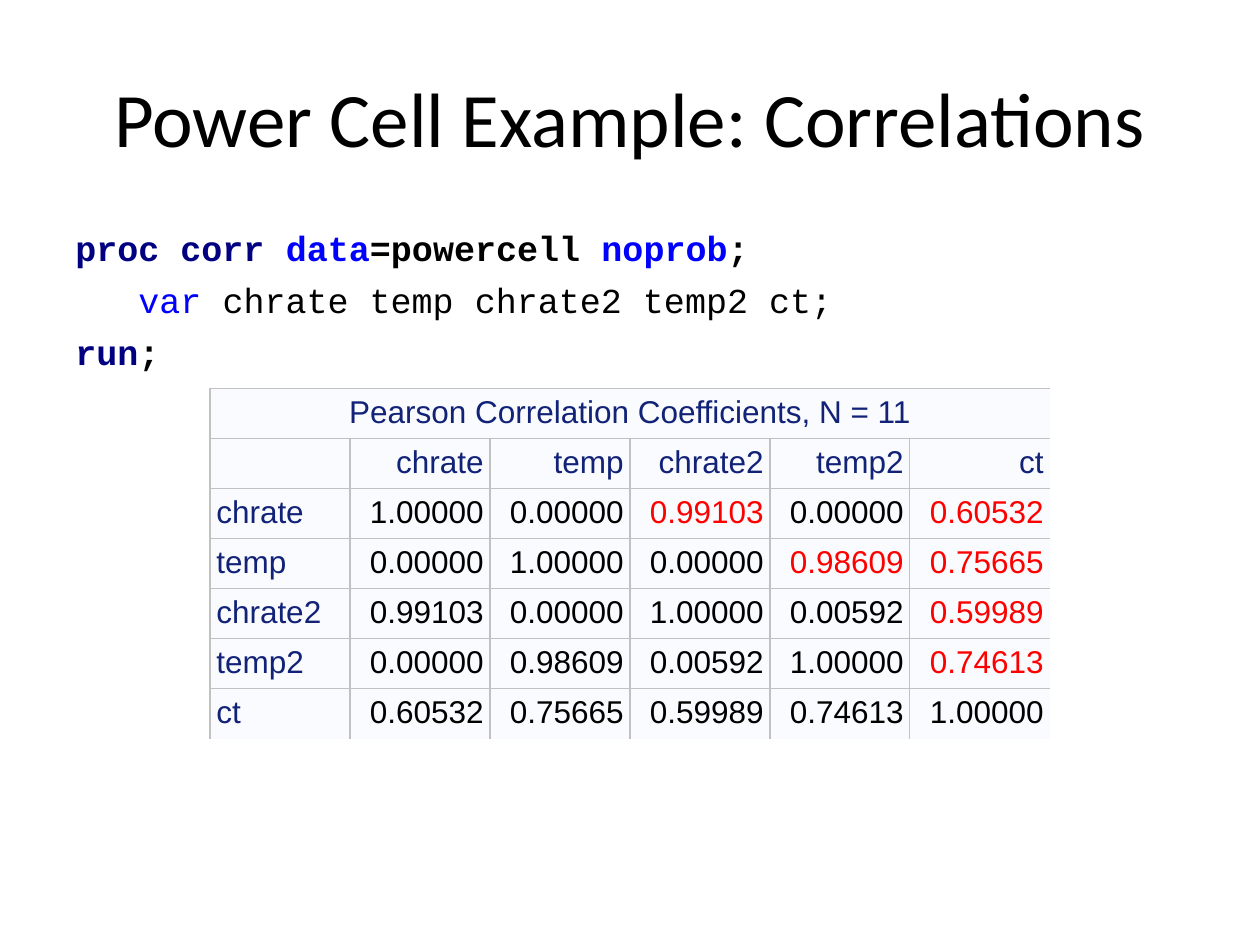
from lxml.etree import SubElement
from pptx import Presentation
from pptx.dml.color import RGBColor
from pptx.enum.text import MSO_ANCHOR as Anchor, PP_ALIGN as Align
from pptx.oxml.ns import qn
from pptx.util import Pt

COLORS = {
    "black": "000000",
    "navy": "000080",
    "blue": "0000FF",
    "red": "FF0000",
    "heading": "112277",
    "cell": "FAFBFE",
    "border": "C1C1C1",
}
VARIABLES = ["chrate", "temp", "chrate2", "temp2", "ct"]
CORRELATIONS = [
    [1, 0, 0.99103, 0, 0.60532],
    [0, 1, 0, 0.98609, 0.75665],
    [0.99103, 0, 1, 0.00592, 0.59989],
    [0, 0.98609, 0.00592, 1, 0.74613],
    [0.60532, 0.75665, 0.59989, 0.74613, 1],
]
HIGHLIGHTS = {(0, 2), (1, 3), (0, 4), (1, 4), (2, 4), (3, 4)}
CODE = [
    (0, [("proc corr ", "navy", True), ("data", "blue", True),
         ("=powercell ", "black", True), ("noprob", "blue", True),
         (";", "black", True)]),
    (36, [("var ", "blue", False),
          ("chrate temp chrate2 temp2 ct;", "black", False)]),
    (0, [("run", "navy", True), (";", "black", True)]),
]


def rgb(name):
    return RGBColor.from_string(COLORS[name])


def add_run(paragraph, text, font_name, size, color, bold=False):
    run = paragraph.add_run()
    run.text = text
    run.font.name = font_name
    run.font.size = Pt(size)
    run.font.bold = bold
    run.font.color.rgb = rgb(color)


def set_title(slide, text):
    title = slide.shapes.title
    title.left, title.top, title.width, title.height = Pt(36), Pt(21.6), Pt(648), Pt(90)
    title.text_frame.vertical_anchor = Anchor.MIDDLE
    heading = title.text_frame.paragraphs[0]
    heading.alignment = Align.CENTER
    add_run(heading, text, "Calibri", 44, "black")


def add_code(slide, lines):
    frame = slide.shapes.add_textbox(Pt(36), Pt(126), Pt(648), Pt(90)).text_frame
    frame.word_wrap = True
    for number, (indent, tokens) in enumerate(lines):
        line = frame.add_paragraph() if number else frame.paragraphs[0]
        line.space_before = Pt(5.6)
        line._p.get_or_add_pPr().set("marL", str(Pt(indent)))
        for text, color, bold in tokens:
            add_run(line, text, "Courier New", 20, color, bold)


def set_borders(cell, hidden):
    properties = cell._tc.get_or_add_tcPr()
    for side in "LRTB":
        border = SubElement(properties, qn(f"a:ln{side}"), w=str(Pt(0.75)))
        if side in hidden:
            SubElement(border, qn("a:noFill"))
        else:
            fill = SubElement(border, qn("a:solidFill"))
            SubElement(fill, qn("a:srgbClr"), val=COLORS["border"])


def fill_cell(cell, text, color, alignment, hidden):
    cell.margin_left = cell.margin_right = Pt(3.6)
    cell.margin_top = cell.margin_bottom = Pt(3.5)
    set_borders(cell, hidden)
    cell.fill.solid()
    cell.fill.fore_color.rgb = rgb("cell")
    entry = cell.text_frame.paragraphs[0]
    entry.alignment = alignment
    add_run(entry, text, "Arial", 18, color)


def cell_content(row, column):
    if row == 0:
        caption = "Pearson Correlation Coefficients, N = 11" if column == 0 else ""
        return caption, "heading", Align.CENTER
    if row == 1:
        return ([""] + VARIABLES)[column], "heading", Align.RIGHT
    if column == 0:
        return VARIABLES[row - 2], "heading", Align.LEFT
    position = (row - 2, column - 1)
    value = CORRELATIONS[position[0]][position[1]]
    return f"{value:.5f}", "red" if position in HIGHLIGHTS else "black", Align.RIGHT


def add_correlations(slide):
    row_count, column_count = len(VARIABLES) + 2, len(VARIABLES) + 1
    row_height = 27.7
    table = slide.shapes.add_table(
        row_count, column_count, Pt(120), Pt(222), Pt(480), Pt(row_height * row_count)
    ).table
    table.first_row = table.horz_banding = False
    for column in table.columns:
        column.width = Pt(480 / column_count)
    for row in table.rows:
        row.height = Pt(row_height)
    for row in range(row_count):
        for column in range(column_count):
            hidden = "R" if row == 0 or column == column_count - 1 else ""
            hidden += "L" if row == 0 and column else ""
            hidden += "B" if row == row_count - 1 else ""
            fill_cell(table.cell(row, column), *cell_content(row, column), hidden)
    table.cell(0, 0).merge(table.cell(0, column_count - 1))


def main():
    presentation = Presentation()
    presentation.slide_width, presentation.slide_height = Pt(720), Pt(540)
    slide = presentation.slides.add_slide(presentation.slide_layouts[5])
    set_title(slide, "Power Cell Example: Correlations")
    add_code(slide, CODE)
    add_correlations(slide)
    presentation.save("out.pptx")


if __name__ == "__main__":
    main()
